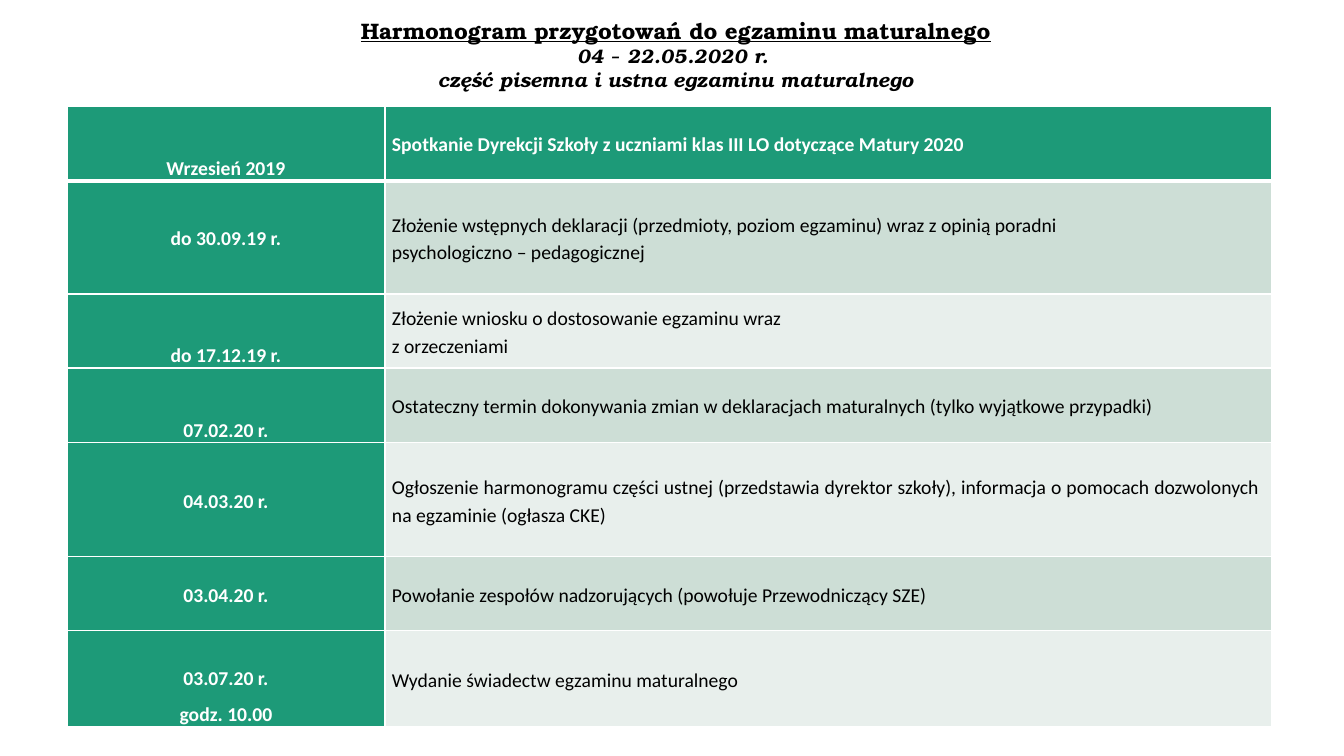
from lxml import etree
from pptx import Presentation
from pptx import util as u
from pptx.dml.color import RGBColor
from pptx.enum import text
from pptx.oxml import ns

SERIF, SANS = "TeX Gyre Bonum", "Calibri"
COLORS = {"green": "1D9A78", "dark band": "CDDED6", "light band": "E8EFEC",
          "white": "FFFFFF", "black": "000000"}

HEADING = [
    [("Harmonogram przygotowań do egzaminu maturalnego", SERIF, 16, True)],
    [("04 ", SERIF, 14, False), ("–", SANS, 14, False),
     (" 22.05.2020 r. ", SERIF, 14, False)],
    [("część pisemna i ustna egzaminu maturalnego", SERIF, 14, False)],
]

TOP, MIDDLE, BOTTOM = (text.MSO_ANCHOR.TOP, text.MSO_ANCHOR.MIDDLE,
                       text.MSO_ANCHOR.BOTTOM)
LEFT, CENTER, JUSTIFY = (text.PP_ALIGN.LEFT, text.PP_ALIGN.CENTER,
                         text.PP_ALIGN.JUSTIFY)

SCHEDULE = [
    (75, ["Wrzesień 2019"], BOTTOM, JUSTIFY,
     ["Spotkanie Dyrekcji Szkoły z uczniami klas III LO dotyczące Matury 2020"]),
    (113, ["do 30.09.19 r."], MIDDLE, LEFT,
     ["Złożenie wstępnych deklaracji (przedmioty, poziom egzaminu) wraz z opinią poradni ",
      "psychologiczno – pedagogicznej"]),
    (74, ["do 17.12.19 r."], BOTTOM, LEFT,
     ["Złożenie wniosku o dostosowanie egzaminu wraz ", "z orzeczeniami"]),
    (75, ["07.02.20 r."], BOTTOM, LEFT,
     ["Ostateczny termin dokonywania zmian w deklaracjach maturalnych "
      "(tylko wyjątkowe przypadki)"]),
    (114, ["04.03.20 r."], MIDDLE, JUSTIFY,
     ["Ogłoszenie harmonogramu części ustnej (przedstawia dyrektor szkoły), "
      "informacja o pomocach dozwolonych ",
      "na egzaminie (ogłasza CKE)"]),
    (74, ["03.04.20 r."], MIDDLE, JUSTIFY,
     ["Powołanie zespołów nadzorujących (powołuje Przewodniczący SZE)"]),
    (96, ["03.07.20 r.", "godz. 10.00"], BOTTOM, JUSTIFY,
     ["Wydanie świadectw egzaminu maturalnego"]),
]
COLUMN_WIDTHS = [318, 887]
TABLE_LEFT, TABLE_TOP = 67, 106
TITLE_BOX = (96, 12, 1160, 115)


def px(length):
    return u.Emu(round(length * 914400 / 100.8))


def color(name):
    return RGBColor.from_string(COLORS[name])


def add_span(para, words, font, size, ink, bold):
    span = para.add_run()
    span.text = words
    span.font.name = font
    span.font.size = u.Pt(size)
    span.font.bold = bold
    span.font.color.rgb = color(ink)
    return span


def draw_borders(cell, row):
    props = cell._tc.get_or_add_tcPr()
    for side in "LRTB":
        heavy = (row, side) in ((0, "B"), (1, "T"))
        line = etree.SubElement(props, ns.qn(f"a:ln{side}"),
                                w=str(u.Pt(3 if heavy else 1)))
        fill = etree.SubElement(line, ns.qn("a:solidFill"))
        etree.SubElement(fill, ns.qn("a:srgbClr"), val=COLORS["white"])


def prepare_cell(cell, row, fill, anchor):
    draw_borders(cell, row)
    cell.fill.solid()
    cell.fill.fore_color.rgb = color(fill)
    cell.vertical_anchor = anchor
    cell.margin_left = cell.margin_right = px(7)
    cell.margin_top = cell.margin_bottom = 0


def add_title(page):
    title = page.shapes.title
    title.left, title.top, title.width, title.height = map(px, TITLE_BOX)
    frame = title.text_frame
    frame.word_wrap = True
    frame.auto_size = text.MSO_AUTO_SIZE.NONE
    frame.vertical_anchor = TOP
    for index, spans in enumerate(HEADING):
        para = frame.add_paragraph() if index else frame.paragraphs[0]
        para.alignment = CENTER
        para.line_spacing = 1.0
        para.space_before = u.Pt(0)
        for words, font, size, main in spans:
            span = add_span(para, words, font, size, "black", True)
            span.font.underline = main
            span.font.italic = not main


def add_schedule(page):
    height = sum(entry[0] for entry in SCHEDULE)
    table = page.shapes.add_table(
        len(SCHEDULE), len(COLUMN_WIDTHS), px(TABLE_LEFT), px(TABLE_TOP),
        px(sum(COLUMN_WIDTHS)), px(height)).table
    for column, width in zip(table.columns, COLUMN_WIDTHS):
        column.width = px(width)
    for row, (height, dates, anchor, align, lines) in enumerate(SCHEDULE):
        table.rows[row].height = px(height)
        date_cell, task_cell = table.cell(row, 0), table.cell(row, 1)
        header = row == 0
        band = "green" if header else "dark band" if row % 2 else "light band"
        prepare_cell(date_cell, row, "green", anchor)
        prepare_cell(task_cell, row, band, MIDDLE)

        frame = date_cell.text_frame
        for index, date in enumerate(dates):
            para = frame.add_paragraph() if index else frame.paragraphs[0]
            para.alignment = CENTER
            para.line_spacing = 1.5 if len(dates) > 1 else 1.15
            add_span(para, date, SANS, 14, "white", True)

        para = task_cell.text_frame.paragraphs[0]
        para.alignment = align
        para.line_spacing = 1.15
        for index, line in enumerate(lines):
            if index:
                para.add_line_break()
            add_span(para, line, SANS, 14, "white" if header else "black", header)


def main():
    deck = Presentation()
    deck.slide_width, deck.slide_height = px(1344), px(756)
    page = deck.slides.add_slide(deck.slide_layouts[5])
    add_title(page)
    add_schedule(page)
    deck.save("out.pptx")


if __name__ == "__main__":
    main()
